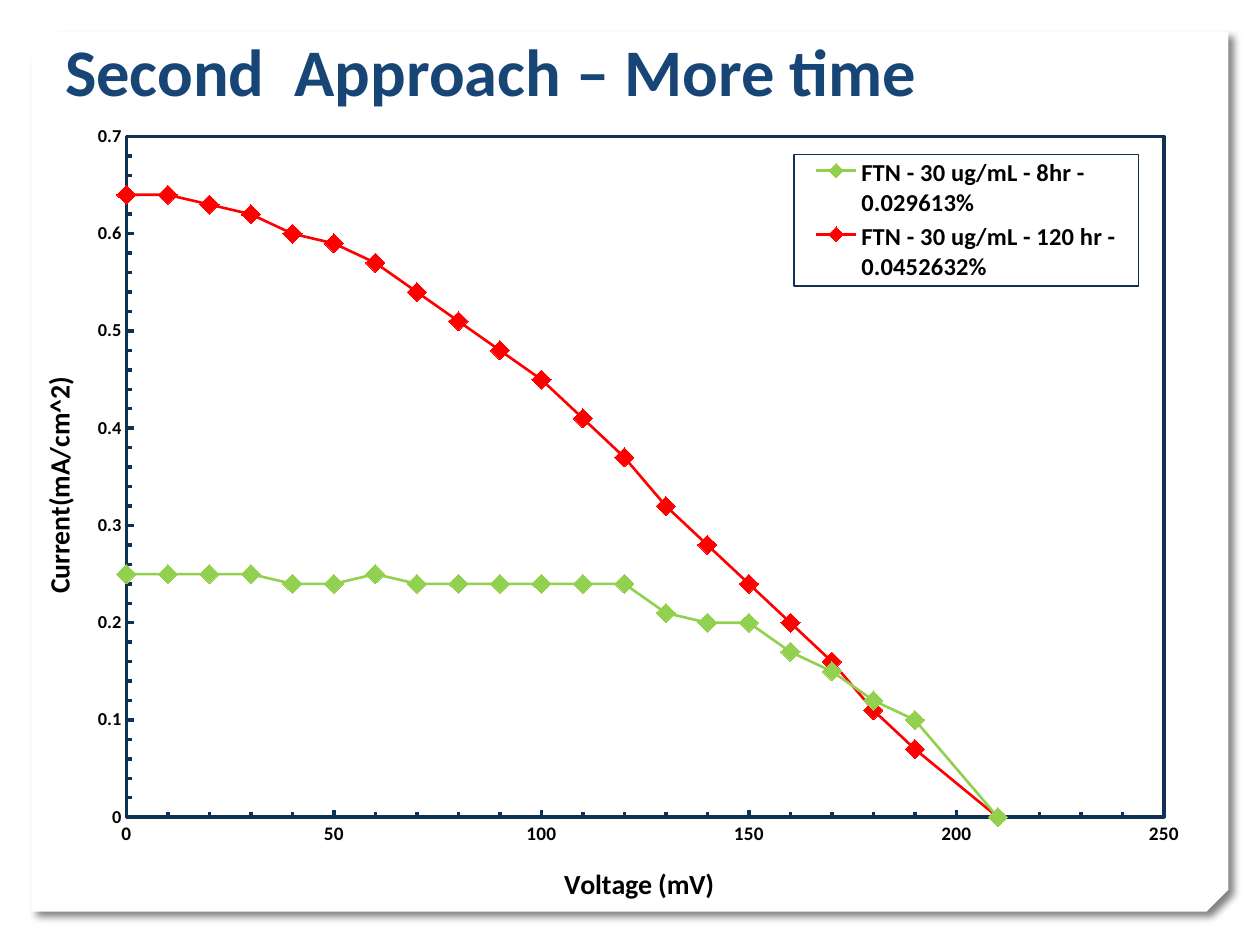
from lxml.etree import fromstring
from pptx import Presentation
from pptx.chart.data import XyChartData
from pptx.dml.color import RGBColor
from pptx.enum.chart import XL_CHART_TYPE as Kind, XL_LEGEND_POSITION as Spot
from pptx.enum.chart import XL_MARKER_STYLE as Mark, XL_TICK_MARK as Tick
from pptx.enum.shapes import MSO_SHAPE as Form
from pptx.enum.text import MSO_ANCHOR as Anchor, PP_ALIGN as Align
from pptx.oxml.ns import qn
from pptx.util import Pt

FONT = "Calibri"
HUES = {"paper": "FFFFFF", "title": "174576", "frame": "103154",
        "text": "000000", "short": "92D050", "long": "FF0000"}
RGB = {name: RGBColor.from_string(code) for name, code in HUES.items()}
NS = ('xmlns:c="http://schemas.openxmlformats.org/drawingml/2006/chart" '
      'xmlns:a="http://schemas.openxmlformats.org/drawingml/2006/main"')


def style(font, size, hue="text", bold=True):
    form = {"name": FONT, "size": Pt(size), "bold": bold}
    for key, value in form.items():
        setattr(font, key, value)
    font.color.rgb = RGB[hue]


def place(node, after=None, inner=False, **box):
    """Give a chart part a manual layout, as shares of the chart."""
    for old in node.findall(qn("c:layout")):
        node.remove(old)
    rows = '<c:layoutTarget val="inner"/>' if inner else ""
    rows += "".join(f'<c:{key}Mode val="edge"/>' for key in "xy")
    rows += "".join(f'<c:{key} val="{value}"/>' for key, value in box.items())
    part = fromstring(f"<c:layout {NS}><c:manualLayout>{rows}"
                      "</c:manualLayout></c:layout>")
    if after:
        node.find(qn(after)).addnext(part)
    else:
        node.insert(0, part)


deck = Presentation()
deck.slide_width, deck.slide_height = Pt(720), Pt(540)
slide = deck.slides.add_slide(deck.slide_layouts[5])
title = slide.shapes.title

# Paper with one snipped corner and a soft shadow
paper = slide.shapes.add_shape(Form.SNIP_2_DIAG_RECTANGLE,
                               Pt(18), Pt(18), Pt(684), Pt(503))
paper.adjustments[0], paper.adjustments[1] = 0, 0.025
paper.fill.solid()
paper.fill.fore_color.rgb = RGB["paper"]
paper.line.fill.background()
paper.shadow.inherit = False
props = paper._element.spPr
props.find(qn("a:xfrm")).set("flipV", "1")
props.find(qn("a:effectLst")).append(fromstring(
    f'<a:outerShdw {NS} blurRad="{Pt(4)}" dist="{Pt(5)}" dir="2700000" '
    f'algn="tl" rotWithShape="0"><a:srgbClr val="{HUES["text"]}">'
    '<a:alpha val="50000"/></a:srgbClr></a:outerShdw>'))
title._element.addprevious(paper._element)

# Title
spot = {"left": 30, "top": -23.5, "width": 597, "height": 90}
for key, value in spot.items():
    setattr(title, key, Pt(value))
frame = title.text_frame
frame.text = "Second  Approach – More time"
frame.word_wrap = True
frame.vertical_anchor = Anchor.BOTTOM
frame.paragraphs[0].alignment = Align.LEFT
style(frame.paragraphs[0].runs[0].font, 38, "title")

# Current against voltage
volts = [*range(0, 200, 10), 210]
runs = [
    ("FTN - 30 ug/mL - 8hr - 0.029613%", "short",
     [0.25, 0.25, 0.25, 0.25, 0.24, 0.24, 0.25, 0.24, 0.24, 0.24, 0.24,
      0.24, 0.24, 0.21, 0.2, 0.2, 0.17, 0.15, 0.12, 0.1, 0]),
    ("FTN - 30 ug/mL - 120 hr - 0.0452632%", "long",
     [0.64, 0.64, 0.63, 0.62, 0.6, 0.59, 0.57, 0.54, 0.51, 0.48, 0.45,
      0.41, 0.37, 0.32, 0.28, 0.24, 0.2, 0.16, 0.11, 0.07, 0]),
]
data = XyChartData()
for name, hue, amps in runs:
    series = data.add_series(name)
    for volt, amp in zip(volts, amps):
        series.add_data_point(volt, amp)
chart = slide.shapes.add_chart(Kind.XY_SCATTER_LINES, Pt(20), Pt(66.3),
                               Pt(661), Pt(454.3), data).chart
chart.has_title = False
style(chart.font, 10, "frame", False)
plot = chart.plots[0]
plot.vary_by_categories = False

# Lines and markers
for series, (name, hue, amps) in zip(plot.series, runs):
    series.smooth = False
    series.format.line.color.rgb = RGB[hue]
    series.format.line.width = Pt(1.5)
    dot = series.marker
    dot.style, dot.size = Mark.DIAMOND, 11
    dot.format.fill.solid()
    dot.format.fill.fore_color.rgb = RGB[hue]
    dot.format.line.color.rgb = RGB[hue]

# Axes
axes = [
    (chart.category_axis, "Voltage (mV)", 11, 250, 50, 10, 0.453, 0.946),
    (chart.value_axis, "Current(mA/cm^2)", 10.5, 0.7, 0.1, 0.02, 0, 0.328),
]
for axis, label, size, top, major, minor, x, y in axes:
    form = {"minimum_scale": 0, "maximum_scale": top,
            "major_unit": major, "minor_unit": minor,
            "major_tick_mark": Tick.INSIDE, "minor_tick_mark": Tick.INSIDE,
            "has_major_gridlines": False, "has_minor_gridlines": False}
    for key, value in form.items():
        setattr(axis, key, value)
    axis.tick_labels.number_format = "General"
    axis.tick_labels.number_format_is_linked = False
    style(axis.tick_labels.font, size)
    axis.format.line.color.rgb = RGB["frame"]
    axis.format.line.width = Pt(2)
    head = axis.axis_title
    head.text_frame.text = label
    style(head.text_frame.paragraphs[0].runs[0].font, 16)
    place(head._element, "c:tx", x=x, y=y)

# Legend
chart.has_legend = True
legend = chart.legend
legend.position = Spot.RIGHT
legend.include_in_layout = False
style(legend.font, 14)
place(legend._element, "c:legendPos", x=0.656, y=0.049, w=0.298, h=0.167)

# Plot area, and the frames round it and the legend
area = chart._chartSpace.chart.plotArea
place(area, inner=True, x=0.079, y=0.026, w=0.897, h=0.855)
for node, width in [(area, 2), (legend._element, 1)]:
    edge = fromstring(
        f'<c:spPr {NS}><a:noFill/><a:ln w="{Pt(width)}"><a:solidFill>'
        f'<a:srgbClr val="{HUES["frame"]}"/></a:solidFill></a:ln></c:spPr>')
    text = node.find(qn("c:txPr"))
    if text is None:
        node.append(edge)
    else:
        text.addprevious(edge)

# The plot reaches down to the tick labels
area.find(".//" + qn("c:h")).set("val", "0.865")

deck.save("out.pptx")
